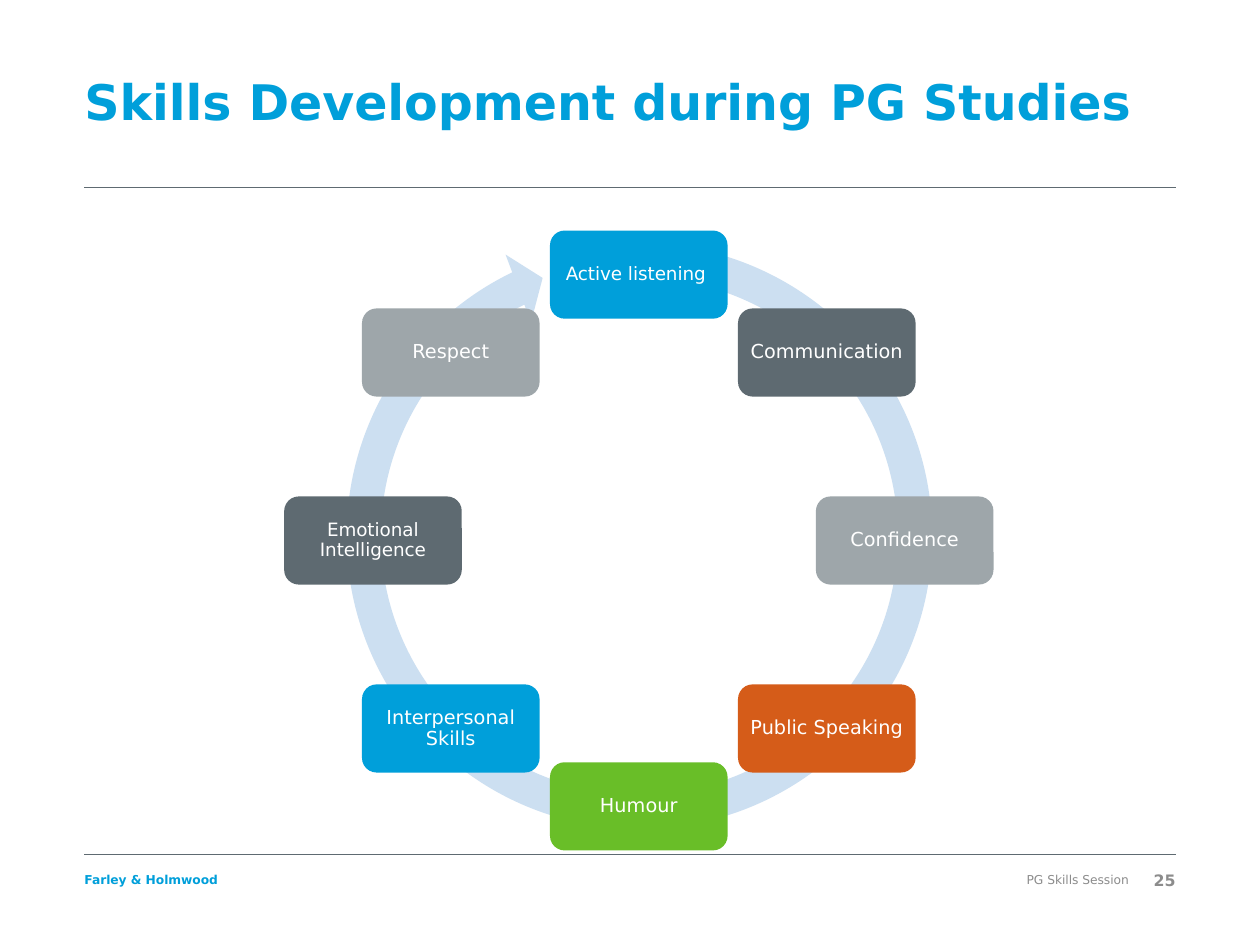
from math import cos, pi, sin

from lxml.etree import SubElement
from pptx import Presentation
from pptx.dml.color import RGBColor
from pptx.enum.shapes import MSO_CONNECTOR, MSO_SHAPE
from pptx.enum.text import MSO_ANCHOR, PP_ALIGN
from pptx.oxml.ns import qn
from pptx.util import Inches, Pt

BLUE = RGBColor(0x00, 0x9F, 0xDA)
SLATE = RGBColor(0x5E, 0x6A, 0x71)
SILVER = RGBColor(0x9E, 0xA6, 0xAA)
ORANGE = RGBColor(0xD5, 0x5C, 0x19)
GREEN = RGBColor(0x69, 0xBE, 0x28)
PALE = RGBColor(0xCC, 0xDF, 0xF1)
GREY = RGBColor(0x8C, 0x8C, 0x8C)
WHITE = RGBColor(0xFF, 0xFF, 0xFF)
FONT = "DejaVu Sans"

WIDE, HIGH = 10, 7.5
LEFT, RIGHT = 0.67, 9.33
FOOT, FOOT_H = 6.85, 0.27

# text, box, size, colour, bold, alignment
LABELS = [
    ("Skills Development during PG Studies", (LEFT, 0.29, RIGHT - LEFT, 1.02),
     28, BLUE, True, PP_ALIGN.LEFT),
    ("Farley & Holmwood", (LEFT, FOOT, 2.68, FOOT_H),
     7, BLUE, True, PP_ALIGN.LEFT),
    ("PG Skills Session", (3.9, FOOT, 5.06, FOOT_H),
     7, GREY, False, PP_ALIGN.RIGHT),
    ("25", (8.95, FOOT, 0.38, FOOT_H), 9, GREY, True, PP_ALIGN.RIGHT),
]
RULES = [1.49, 6.78]

# clockwise from the top: text, fill, size
SKILLS = [
    ("Active listening ", BLUE, 10.5),
    ("Communication", SLATE, 11),
    ("Confidence", SILVER, 11),
    ("Public Speaking", ORANGE, 11),
    ("Humour", GREEN, 11),
    ("Interpersonal Skills", BLUE, 11),
    ("Emotional Intelligence", SLATE, 10.5),
    ("Respect", SILVER, 11),
]
MID_X, MID_Y, RADIUS = 5.07, 4.29, 2.11
BOX_W, BOX_H = 1.41, 0.7
RING = (2.6, 1.78, 4.95, 4.95)
RING_ADJ = (0.055, 3.31, 146.36, 168.82, 0.058)


def write(shape, text, size, color, bold, align, inset=0):
    frame = shape.text_frame
    frame.text = text
    frame.word_wrap = True
    frame.vertical_anchor = MSO_ANCHOR.MIDDLE
    frame.margin_left = frame.margin_right = Inches(inset)
    frame.margin_top = frame.margin_bottom = Inches(inset)
    para = frame.paragraphs[0]
    para.alignment = align
    font = para.runs[0].font
    font.name, font.size, font.bold = FONT, Pt(size), bold
    font.color.rgb = color
    return para


def block(slide, kind, box, fill):
    shape = slide.shapes.add_shape(kind, *map(Inches, box))
    shape.shadow.inherit = False
    shape.fill.solid()
    shape.fill.fore_color.rgb = fill
    shape.line.fill.background()
    return shape


def rule(slide, y):
    line = slide.shapes.add_connector(
        MSO_CONNECTOR.STRAIGHT, *map(Inches, (LEFT, y, RIGHT, y)))
    line.line.color.rgb = SLATE
    line.line.width = Pt(0.25)
    SubElement(line._element.spPr, qn("a:effectLst"))


def cycle(slide):
    ring = block(slide, MSO_SHAPE.CIRCULAR_ARROW, RING, PALE)
    for i, value in enumerate(RING_ADJ):
        ring.adjustments[i] = value
    for i, (text, fill, size) in enumerate(SKILLS):
        turn = 2 * pi * i / len(SKILLS)
        x = MID_X + RADIUS * sin(turn) - BOX_W / 2
        y = MID_Y - RADIUS * cos(turn) - BOX_H / 2
        card = block(slide, MSO_SHAPE.ROUNDED_RECTANGLE,
                     (x, y, BOX_W, BOX_H), fill)
        para = write(card, text, size, WHITE, False, PP_ALIGN.CENTER, 0.05)
        para.line_spacing = 0.9


def main():
    deck = Presentation()
    deck.slide_width, deck.slide_height = Inches(WIDE), Inches(HIGH)
    slide = deck.slides.add_slide(deck.slide_layouts[6])
    for y in RULES:
        rule(slide, y)
    for text, box, *style in LABELS:
        write(slide.shapes.add_textbox(*map(Inches, box)), text, *style)
    cycle(slide)
    deck.save("out.pptx")


if __name__ == "__main__":
    main()
